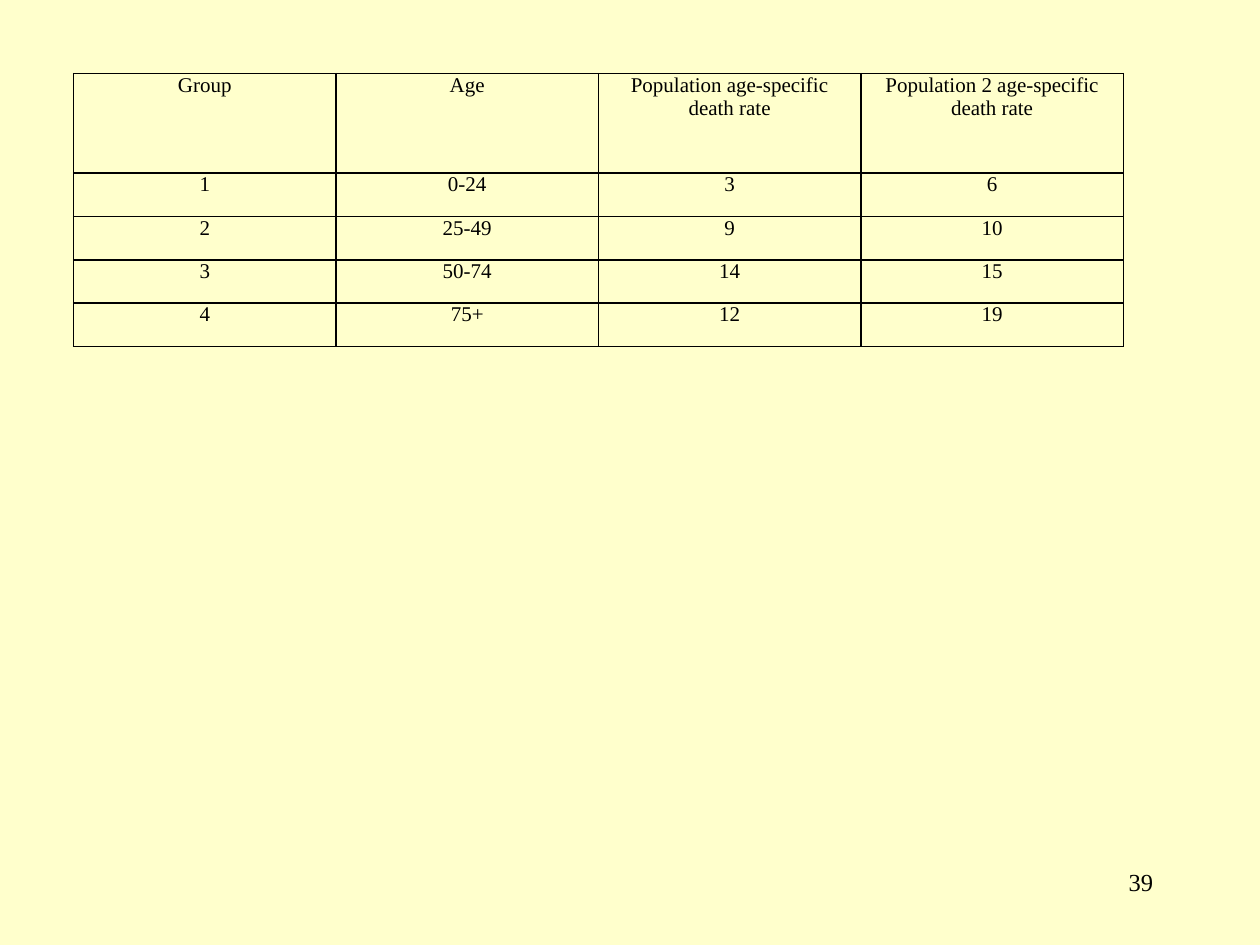
from lxml import etree
from pptx import Presentation
from pptx import util as u
from pptx.dml.color import RGBColor
from pptx.enum import text
from pptx.oxml import ns

COLORS = {"paper": "FFFFCC", "ink": "000000"}
RATES = [
    ("Group", "Age", "Population age-specific death rate",
     "Population 2 age-specific death rate"),
    ("1", "0-24", "3", "6"),
    ("2", "25-49", "9", "10"),
    ("3", "50-74", "14", "15"),
    ("4", "75+", "12", "19"),
]


class Deck:
    """Holds the style and the current slide."""

    def __init__(self, wide, high):
        self.face = "Times New Roman"
        self.prs = Presentation()
        self.prs.slide_width, self.prs.slide_height = u.Pt(wide), u.Pt(high)
        self.slide = self.prs.slides.add_slide(self.prs.slide_layouts[6])
        fill = self.slide.background.fill
        fill.solid()
        fill.fore_color.rgb = self.color("paper")

    def color(self, name):
        return RGBColor.from_string(COLORS[name])

    def letter(self, frame, words, size, align):
        frame.word_wrap = True
        para = frame.paragraphs[0]
        para.text = words
        para.alignment = align
        para.font.name = self.face
        para.font.size = u.Pt(size)
        para.font.color.rgb = self.color("ink")

    def border(self, cell, width):
        props = cell._tc.get_or_add_tcPr()
        for spot, side in enumerate(("lnL", "lnR", "lnT", "lnB")):
            line = etree.Element(ns.qn(f"a:{side}"), w=str(u.Pt(width)))
            fill = etree.SubElement(line, ns.qn("a:solidFill"))
            etree.SubElement(fill, ns.qn("a:srgbClr"), val=COLORS["ink"])
            props.insert(spot, line)

    def table(self, rows, left, top, widths, heights):
        box = map(u.Pt, (left, top, sum(widths), sum(heights)))
        grid = self.slide.shapes.add_table(len(rows), len(widths), *box).table
        grid.first_row = grid.horz_banding = False
        for col, width in zip(grid.columns, widths):
            col.width = u.Pt(width)
        for row, height, words in zip(grid.rows, heights, rows):
            row.height = u.Pt(height)
            for cell, word in zip(row.cells, words):
                cell.margin_left = cell.margin_right = u.Pt(5)
                cell.margin_top = cell.margin_bottom = 0
                cell.fill.background()
                self.border(cell, 1)
                self.letter(cell.text_frame, word, 12, text.PP_ALIGN.CENTER)

    def label(self, words, left, top, width, height):
        box = map(u.Pt, (left, top, width, height))
        frame = self.slide.shapes.add_textbox(*box).text_frame
        self.letter(frame, words, 14, text.PP_ALIGN.RIGHT)


def main():
    deck = Deck(720, 540)
    deck.table(RATES, 42, 42, [150] * 4, [57] + [24.75] * 4)
    deck.label("39", 516, 492, 150, 36)
    deck.prs.save("out.pptx")


if __name__ == "__main__":
    main()
